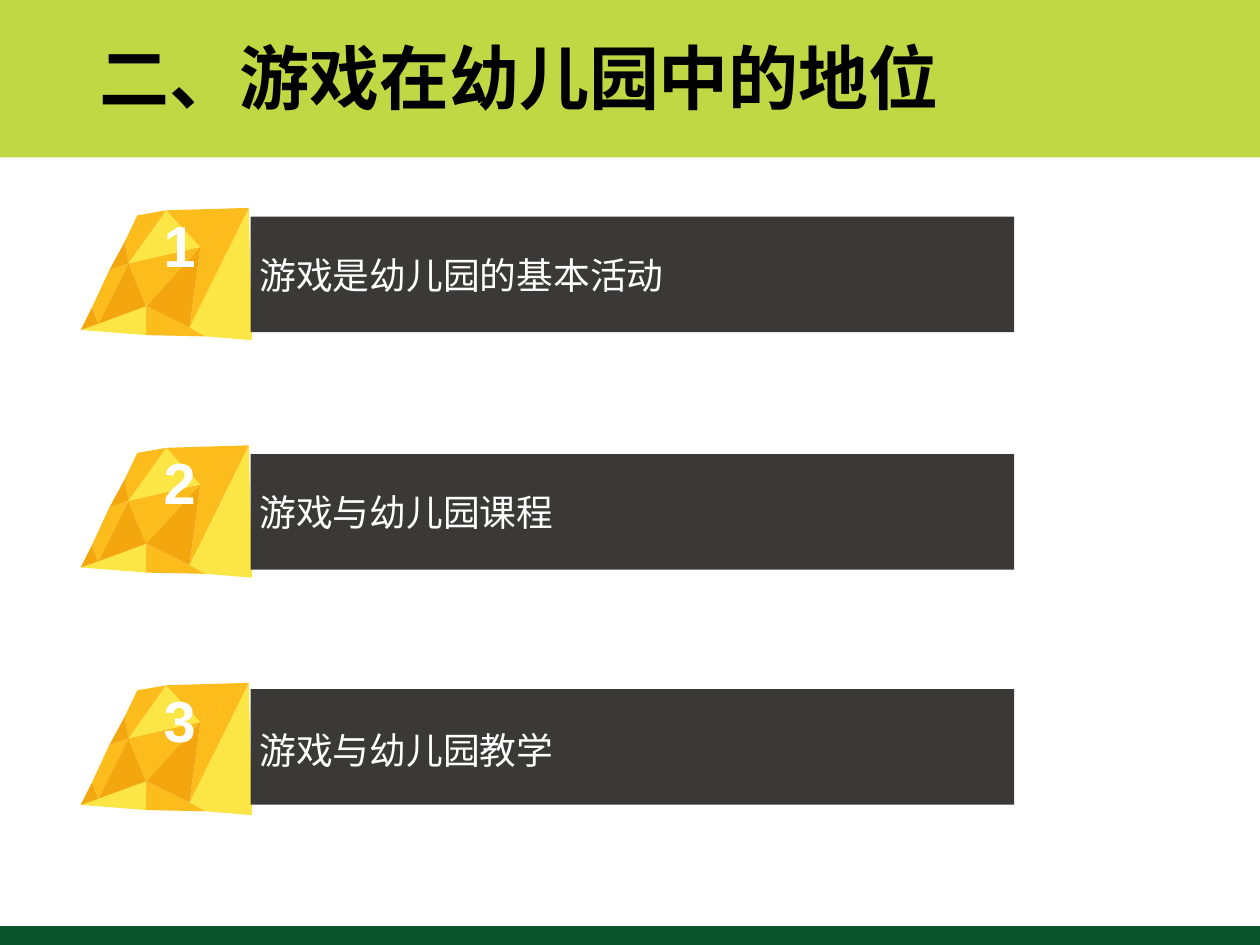
from pptx import Presentation
from pptx.dml.color import RGBColor
from pptx.enum.shapes import MSO_SHAPE
from pptx.enum.text import MSO_ANCHOR, MSO_AUTO_SIZE, PP_ALIGN
from pptx.util import Pt

RECT = MSO_SHAPE.RECTANGLE
TOP, MIDDLE = MSO_ANCHOR.TOP, MSO_ANCHOR.MIDDLE
LEFT, CENTER = PP_ALIGN.LEFT, PP_ALIGN.CENTER
NO_FIT = MSO_AUTO_SIZE.NONE
TITLE_ONLY = 5

LIME, GREEN, DARK = "BFD844", "09532A", "3B3838"
YELLOW, AMBER, ORANGE = "FCE646", "FCBC1C", "F3A60D"
WHITE, BLACK = "FFFFFF", "000000"

# Gem corners in points: x on the slide, y below the gem's top
CORNERS = {
    "top_left": (78.5, 4.3), "top": (95, 1.4), "top_right": (142.2, 0),
    "left_high": (71.3, 19.4), "left_mid": (62.6, 35.3), "left_low": (52.6, 56.9),
    "hub_left": (73.4, 31.7), "hub_right": (114.5, 22.3), "hub_low": (83.5, 56.2),
    "tip_inner": (56.2, 66.2), "tip": (46.1, 69.8), "base": (83.5, 72.7),
    "base_inner": (108.3, 68.4), "base_right": (117.4, 73.4),
    "bottom_right": (144, 75.6),
}
FACETS = [
    (YELLOW, "bottom_right top_right base_inner base_right"),
    (AMBER, "base_right base_inner hub_low base"),
    (YELLOW, "base hub_low tip"),
    (AMBER, "base_inner hub_right top_right"),
    (ORANGE, "base_inner hub_right hub_low"),
    (ORANGE, "tip_inner hub_left hub_low"),
    (ORANGE, "tip_inner left_low tip"),
    (AMBER, "tip_inner hub_left left_mid left_low"),
    (AMBER, "hub_right hub_left hub_low"),
    (YELLOW, "hub_right top hub_left"),
    (AMBER, "top_right hub_right top"),
    (AMBER, "top top_left left_high hub_left"),
    (ORANGE, "hub_left left_high left_mid"),
]


def rgb(value):
    return RGBColor.from_string(value)


class Deck:
    font = "Arial"

    def __init__(self, prs):
        self.s = prs.slides.add_slide(prs.slide_layouts[TITLE_ONLY])

    def paint(self, sp, color):
        sp.shadow.inherit = False
        sp.fill.solid()
        sp.fill.fore_color.rgb = rgb(color)
        sp.line.fill.background()

    def rect(self, x, y, w, h, color):
        sp = self.s.shapes.add_shape(RECT, Pt(x), Pt(y), Pt(w), Pt(h))
        self.paint(sp, color)

    def add_run(self, sp, text, size, color, bold=False, align=LEFT, anchor=MIDDLE):
        tf = sp.text_frame
        tf.word_wrap = True
        tf.auto_size = NO_FIT
        tf.vertical_anchor = anchor
        p = tf.paragraphs[0]
        p.alignment = align
        r = p.add_run()
        r.text = text
        r.font.name = self.font
        r.font.size = Pt(size)
        r.font.bold = bold
        r.font.color.rgb = rgb(color)

    def title(self, text, x, y, w, h):
        sp = self.s.shapes.title
        sp.left, sp.top, sp.width, sp.height = Pt(x), Pt(y), Pt(w), Pt(h)
        self.add_run(sp, text, 40, BLACK, bold=True)
        # Bring the title in front of the bands
        sp.element.getparent().append(sp.element)

    def text(self, x, y, w, h, text, size, **style):
        sp = self.s.shapes.add_textbox(Pt(x), Pt(y), Pt(w), Pt(h))
        tf = sp.text_frame
        tf.margin_left = tf.margin_right = Pt(5)
        tf.margin_top = tf.margin_bottom = Pt(3)
        self.add_run(sp, text, size, WHITE, **style)

    def gem(self, y):
        group = self.s.shapes.add_group_shape()
        for color, names in FACETS:
            points = [(Pt(CORNERS[n][0]), Pt(y + CORNERS[n][1])) for n in names.split()]
            fb = group.shapes.build_freeform(*points[0], scale=1.0)
            fb.add_line_segments(points[1:], close=True)
            self.paint(fb.convert_to_shape(), color)


def main():
    prs = Presentation()
    prs.slide_width, prs.slide_height = Pt(720), Pt(540)
    deck = Deck(prs)

    # Bands and title
    deck.rect(0, 0, 720, 90, LIME)
    deck.rect(0, 529.2, 720, 10.8, GREEN)
    deck.title("二、游戏在幼儿园中的地位", 49.7, 15.8, 563.8, 55.4)

    # Numbered topics; the last bar sits slightly higher in its row
    topics = [
        ("游戏是幼儿园的基本活动", 5),
        ("游戏与幼儿园课程", 5),
        ("游戏与幼儿园教学", 3.6),
    ]
    for i, (topic, bar_drop) in enumerate(topics):
        y = 118.8 + i * 135.7
        deck.gem(y)
        deck.rect(143.3, y + bar_drop, 436.3, 66, DARK)
        deck.text(61.2, y - 2, 82.8, 80, str(i + 1), 33, bold=True, align=CENTER, anchor=TOP)
        deck.text(143.3, y + 5.8, 436.3, 64.8, topic, 21)

    prs.save("out.pptx")


if __name__ == "__main__":
    main()
